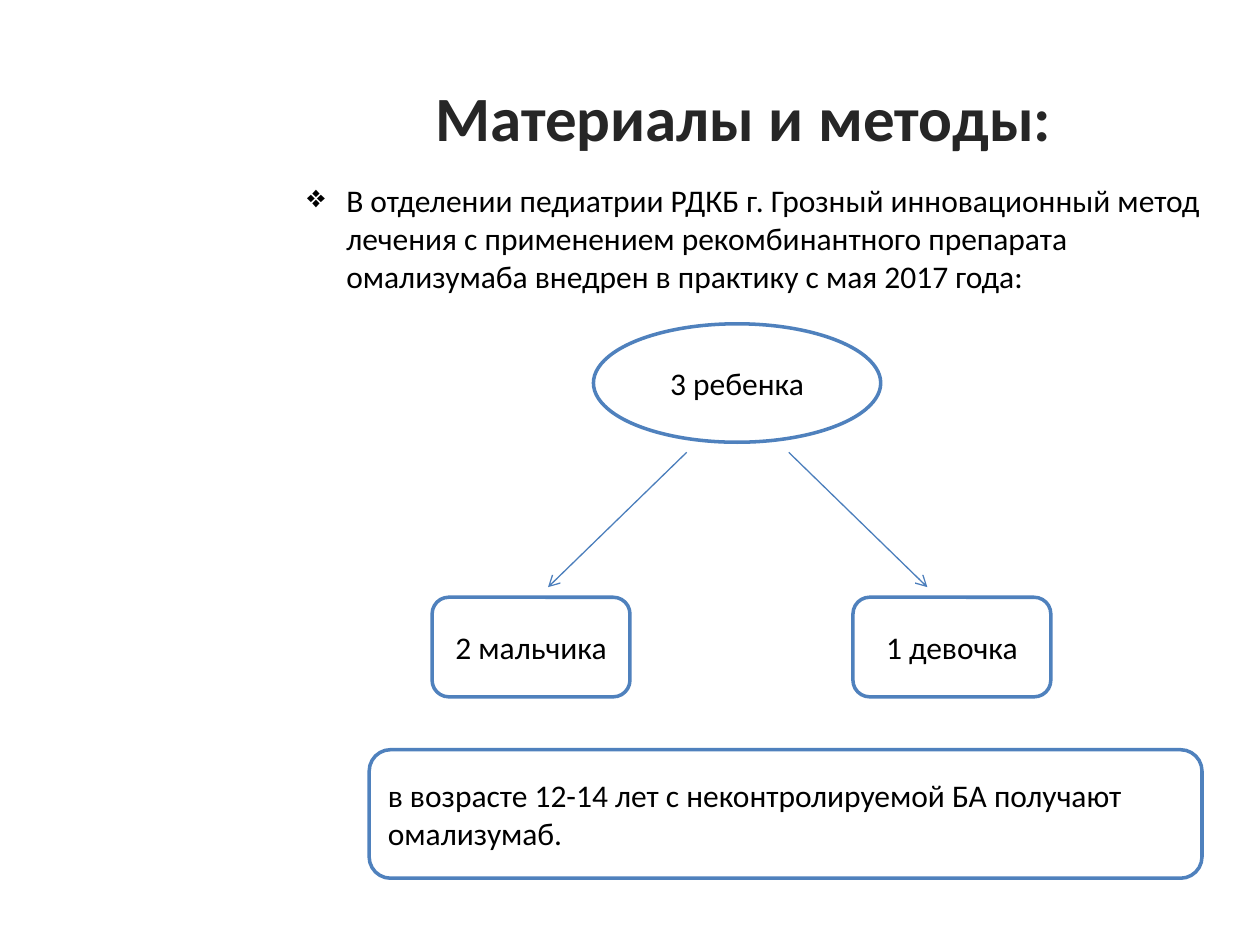
from lxml import etree
from pptx import Presentation
from pptx.dml.color import RGBColor
from pptx.enum.shapes import MSO_CONNECTOR, MSO_SHAPE
from pptx.enum.text import MSO_ANCHOR, PP_ALIGN
from pptx.oxml.ns import qn
from pptx.util import Inches, Pt

OVAL, ROUNDED = MSO_SHAPE.OVAL, MSO_SHAPE.ROUNDED_RECTANGLE
STRAIGHT = MSO_CONNECTOR.STRAIGHT
MIDDLE = MSO_ANCHOR.MIDDLE
LEFT, CENTER = PP_ALIGN.LEFT, PP_ALIGN.CENTER

FONT = "Calibri"
BLACK, WHITE, TITLE_GRAY = "000000", "FFFFFF", "262626"
OUTLINE, ARROW = "4F81BD", "4B7EBC"


def color(hex_string):
    return RGBColor.from_string(hex_string)


def write(paragraph, text, size=18, hex_color=BLACK, bold=False, align=LEFT):
    paragraph.alignment = align
    run = paragraph.add_run()
    run.text = text
    run.font.name = FONT
    run.font.size = Pt(size)
    run.font.bold = bold
    run.font.color.rgb = color(hex_color)


def add_text_frame(slide, left, top, width, height):
    box = slide.shapes.add_textbox(
        Inches(left), Inches(top), Inches(width), Inches(height))
    box.text_frame.word_wrap = True
    return box.text_frame


def add_bullet(paragraph, symbol, indent):
    properties = paragraph._p.get_or_add_pPr()
    properties.set("marL", str(Inches(indent)))
    properties.set("indent", str(-Inches(indent)))
    etree.SubElement(properties, qn("a:buChar")).set("char", symbol)


def add_node(slide, kind, left, top, width, height, text, align=CENTER):
    node = slide.shapes.add_shape(
        kind, Inches(left), Inches(top), Inches(width), Inches(height))
    node.shadow.inherit = False
    node.fill.solid()
    node.fill.fore_color.rgb = color(WHITE)
    node.line.color.rgb = color(OUTLINE)
    node.line.width = Pt(2)
    node.text_frame.word_wrap = True
    node.text_frame.vertical_anchor = MIDDLE
    write(node.text_frame.paragraphs[0], text, align=align)


def add_arrow(slide, x1, y1, x2, y2):
    arrow = slide.shapes.add_connector(
        STRAIGHT, Inches(x1), Inches(y1), Inches(x2), Inches(y2))
    arrow.line.color.rgb = color(ARROW)
    arrow.line.width = Pt(0.75)
    etree.SubElement(arrow.line._get_or_add_ln(), qn("a:tailEnd")).set("type", "arrow")
    etree.SubElement(arrow._element.spPr, qn("a:effectLst"))


def main():
    prs = Presentation()
    prs.slide_width, prs.slide_height = Inches(10), Inches(7.5)
    slide = prs.slides.add_slide(prs.slide_layouts[6])

    # Title
    title = add_text_frame(slide, 2.11, 0.3, 7.58, 1.25)
    title.vertical_anchor = MIDDLE
    write(title.paragraphs[0], "Материалы и методы:", 36, TITLE_GRAY, True, CENTER)

    # Introduction
    intro = add_text_frame(slide, 2.34, 1.39, 7.54, 1.01).paragraphs[0]
    add_bullet(intro, "❖", 0.31)
    write(intro, "В отделении педиатрии РДКБ г. Грозный инновационный метод "
                 "лечения с применением рекомбинантного препарата "
                 "омализумаба внедрен в практику с мая 2017 года:")

    # All patients, split into boys and girls
    add_node(slide, OVAL, 4.71, 2.57, 2.28, 0.94, "3 ребенка")
    branches = [(5.45, 4.35, 3.43, "2 мальчика"), (6.26, 7.36, 6.77, "1 девочка")]
    for start, end, group_left, group in branches:
        add_arrow(slide, start, 3.59, end, 4.66)
        add_node(slide, ROUNDED, group_left, 4.74, 1.57, 0.79, group)

    # Age and treatment
    add_node(slide, ROUNDED, 2.93, 5.95, 6.61, 1.02,
             "в возрасте 12-14 лет с неконтролируемой БА получают омализумаб.", LEFT)

    prs.save("out.pptx")


if __name__ == "__main__":
    main()
